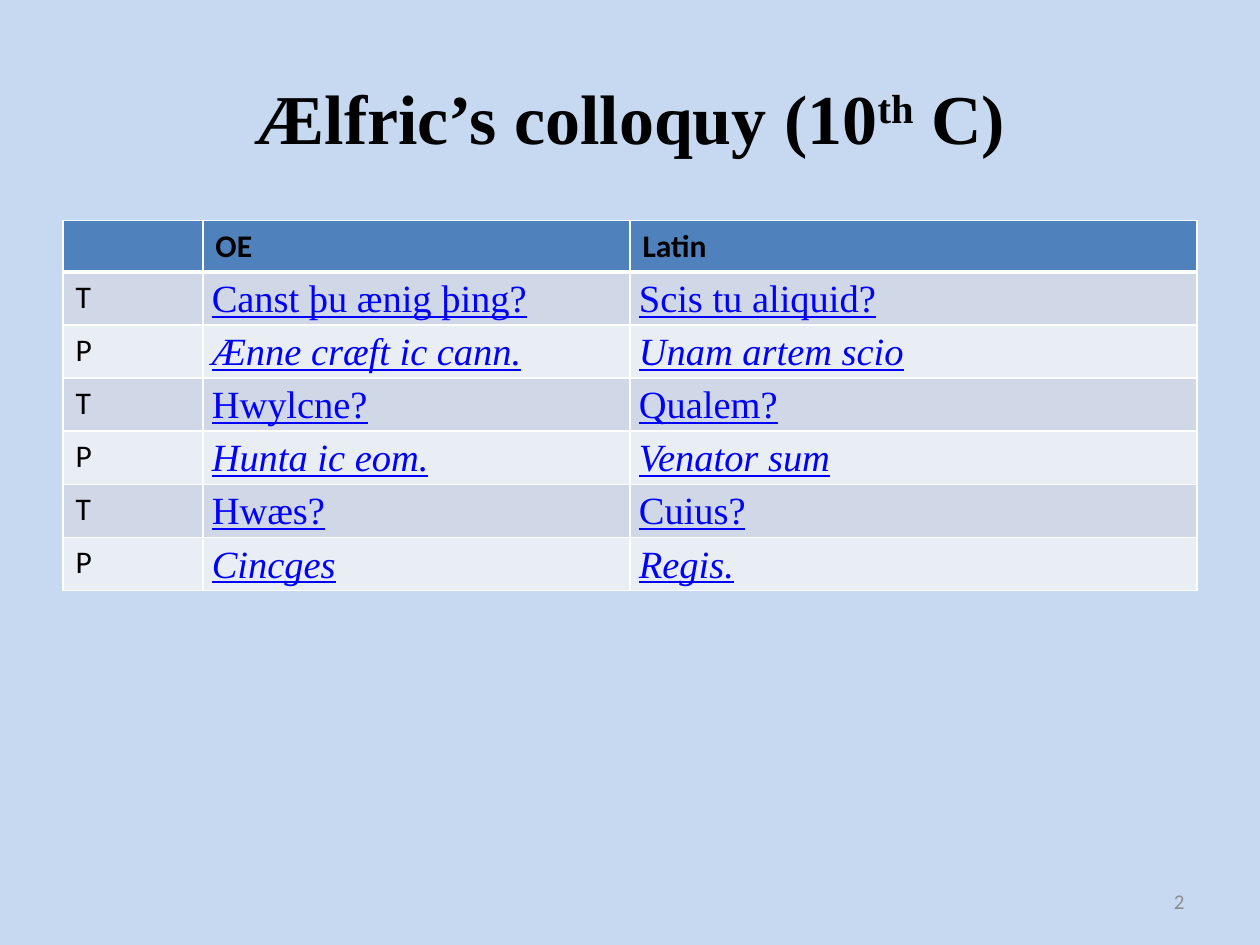
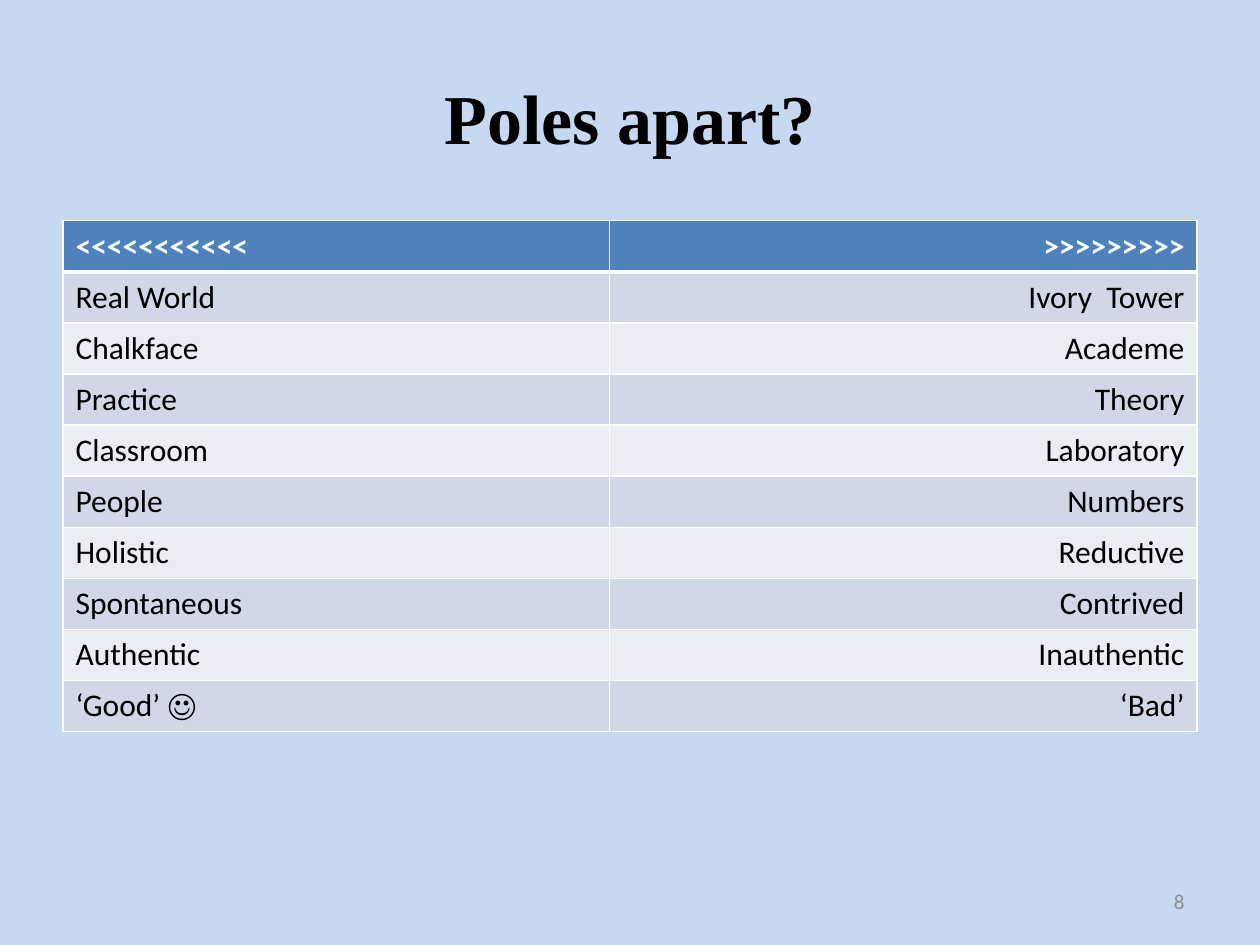
from dataclasses import dataclass

from lxml.etree import SubElement
from pptx import Presentation
from pptx.dml.color import RGBColor
from pptx.enum.text import MSO_ANCHOR, PP_ALIGN
from pptx.oxml.ns import qn
from pptx.util import Cm, Pt

BACKGROUND, HEADER, BANDS = "C6D9F1", "4F81BD", ("D0D8E8", "E9EDF4")
BLACK, WHITE, GREY, LINK = "000000", "FFFFFF", "8C8C8C", "0000FF"
SANS, SERIF = "Calibri", "Times New Roman"
LEFT, TABLE_TOP, ROW_HEIGHT = 1.27, 4.45, 1.03


@dataclass(frozen=True)
class TableSlide:
    """A titled slide holding one table."""
    title: tuple[str, ...]
    number: str
    widths: tuple[float, ...]
    rows: tuple[tuple[str, ...], ...]
    header_color: str
    dialogue: bool = False


SLIDES = (
    TableSlide(
        ("Ælfric’s colloquy (10", "th", " C)"), "2", (2.82, 8.61, 11.43),
        (("", "OE", "Latin"),
         ("T", "Canst þu ænig þing?", "Scis tu aliquid?"),
         ("P", "Ænne cræft ic cann.", "Unam artem scio"),
         ("T", "Hwylcne?", "Qualem?"),
         ("P", "Hunta ic eom.", "Venator sum"),
         ("T", "Hwæs?", "Cuius?"),
         ("P", "Cincges", "Regis.")),
        BLACK, dialogue=True),
    TableSlide(
        ("Poles apart?",), "8", (11.02, 11.84),
        (("<<<<<<<<<<<", ">>>>>>>>>"),
         ("Real World", "Ivory  Tower"),
         ("Chalkface", "Academe"),
         ("Practice", "Theory"),
         ("Classroom", "Laboratory"),
         ("People", "Numbers"),
         ("Holistic", "Reductive"),
         ("Spontaneous", "Contrived"),
         ("Authentic", "Inauthentic"),
         ("‘Good’ ☺", "‘Bad’")),
        WHITE),
)


def rgb(color: str) -> RGBColor:
    """Turn a hex string into a colour."""
    return RGBColor.from_string(color)


def add_text(p, text: str, *, size: float = 18, font: str = SANS, color: str = BLACK,
             bold: bool = False, italic: bool = False, underline: bool = False,
             raised: bool = False, align=PP_ALIGN.LEFT) -> None:
    """Add a formatted run to a paragraph."""
    p.alignment = align
    r = p.add_run()
    r.text = text
    f = r.font
    f.size, f.name, f.color.rgb = Pt(size), font, rgb(color)
    f.bold, f.italic, f.underline = bold, italic, underline
    if raised:
        r._r.get_or_add_rPr().set("baseline", "30000")


def add_box(s, left: float, top: float, width: float, height: float):
    """Add a middle-anchored text box and return its paragraph."""
    tf = s.shapes.add_textbox(Cm(left), Cm(top), Cm(width), Cm(height)).text_frame
    tf.word_wrap = True
    tf.vertical_anchor = MSO_ANCHOR.MIDDLE
    return tf.paragraphs[0]


def style_cell(cell, row: int) -> None:
    """Give a cell white borders and its row's fill."""
    tc_pr = cell._tc.get_or_add_tcPr()
    for side in "LRTB":
        thick = (row, side) in ((0, "B"), (1, "T"))
        ln = SubElement(tc_pr, qn(f"a:ln{side}"), w=str(Pt(3 if thick else 1)))
        fill = SubElement(ln, qn("a:solidFill"))
        SubElement(fill, qn("a:srgbClr"), val=WHITE)
    cell.fill.solid()
    cell.fill.fore_color.rgb = rgb(BANDS[(row - 1) % 2] if row else HEADER)


def fill_cell(cell, text: str, row: int, col: int, data: TableSlide) -> None:
    """Write a cell's text in the style of its row and column."""
    p = cell.text_frame.paragraphs[0]
    if data.dialogue and row and col:
        cell.margin_left = cell.margin_right = Cm(0.18)
        cell.margin_top = cell.margin_bottom = 0
        p.line_spacing = 1.15
        add_text(p, text, size=22, font=SERIF, color=LINK, underline=True,
                 italic=data.rows[row][0] == "P")
    elif text:
        right = col and not data.dialogue
        add_text(p, text, color=BLACK if row else data.header_color, bold=not row,
                 align=PP_ALIGN.RIGHT if right else PP_ALIGN.LEFT)


def add_table(s, data: TableSlide) -> None:
    """Draw the slide's table."""
    table = s.shapes.add_table(
        len(data.rows), len(data.widths), Cm(LEFT), Cm(TABLE_TOP),
        Cm(sum(data.widths)), Cm(ROW_HEIGHT * len(data.rows))).table
    for column, width in zip(table.columns, data.widths):
        column.width = Cm(width)
    for i, texts in enumerate(data.rows):
        table.rows[i].height = Cm(ROW_HEIGHT)
        for j, text in enumerate(texts):
            cell = table.cell(i, j)
            style_cell(cell, i)
            fill_cell(cell, text, i, j, data)


def add_slide(prs, data: TableSlide) -> None:
    """Build one slide with title, table and number."""
    s = prs.slides.add_slide(prs.slide_layouts[6])
    s.background.fill.solid()
    s.background.fill.fore_color.rgb = rgb(BACKGROUND)
    p = add_box(s, LEFT, 0.76, 22.86, 3.18)
    for i, part in enumerate(data.title):
        add_text(p, part, size=40, font=SERIF, bold=True, raised=i == 1,
                 align=PP_ALIGN.CENTER)
    add_table(s, data)
    add_text(add_box(s, 18.21, 17.65, 5.92, 1.02), data.number, size=12, color=GREY,
             align=PP_ALIGN.RIGHT)


def main() -> None:
    """Build and save the presentation."""
    prs = Presentation()
    prs.slide_width, prs.slide_height = Cm(25.4), Cm(19.05)
    for data in SLIDES:
        add_slide(prs, data)
    prs.save("out.pptx")


if __name__ == "__main__":
    main()
